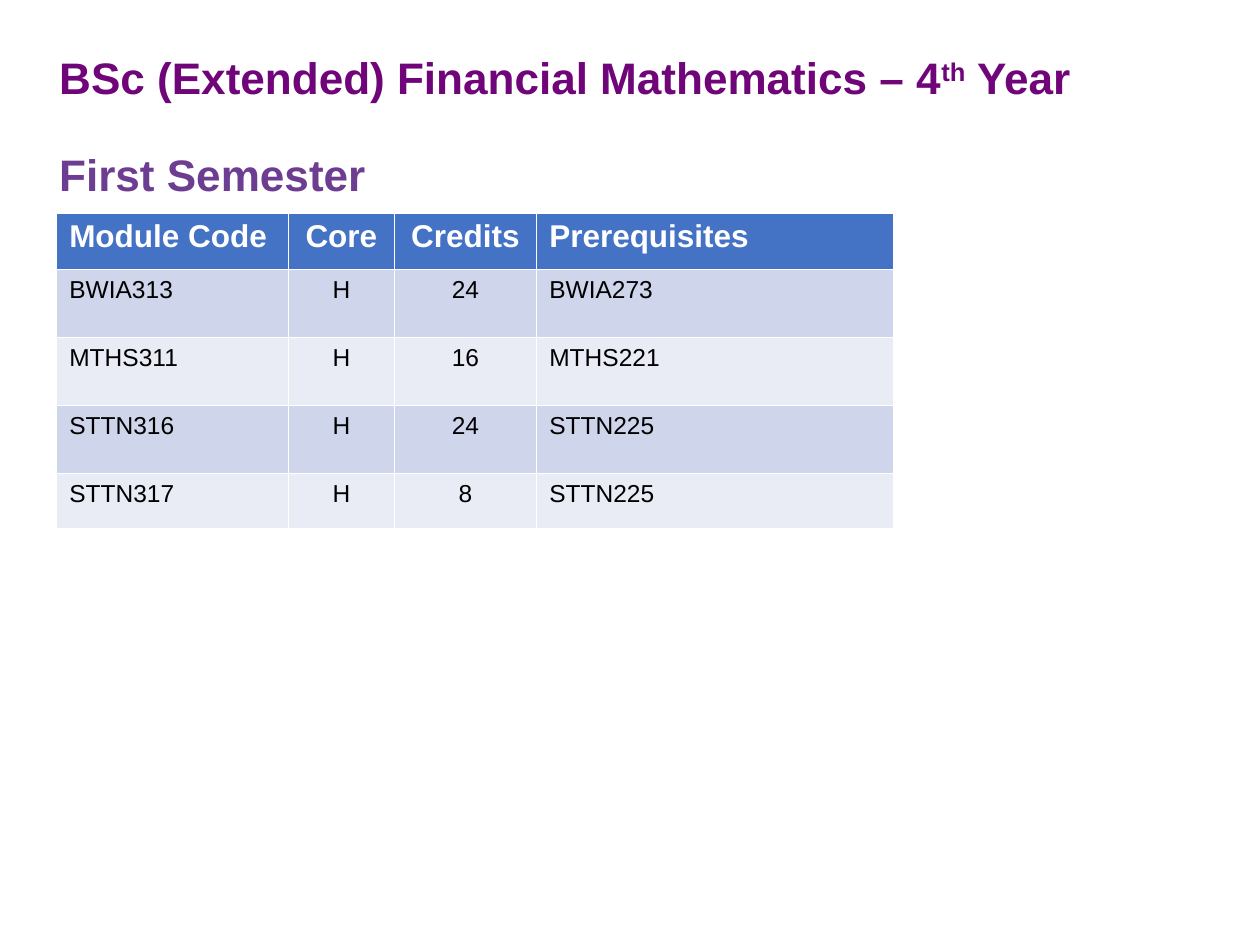
from pptx import Presentation
from pptx.dml.color import RGBColor
from pptx.enum.text import MSO_ANCHOR, MSO_AUTO_SIZE, PP_ALIGN
from pptx.util import Inches, Pt

COLORS = {
    "title": "6F0579",
    "semester": "6C3D91",
    "header": "4472C4",
    "odd_row": "CFD5EA",
    "even_row": "E9EBF5",
    "white": "FFFFFF",
    "black": "000000",
}
MODULES = [
    ("Module Code", "Core", "Credits", "Prerequisites"),
    ("BWIA313", "H", "24", "BWIA273"),
    ("MTHS311", "H", "16", "MTHS221"),
    ("STTN316", "H", "24", "STTN225"),
    ("STTN317", "H", "8", "STTN225"),
]
COLUMN_WIDTHS = (1.84, 0.84, 1.13, 2.83)
ROW_HEIGHTS = (0.45, 0.54, 0.54, 0.54, 0.44)
CENTERED_COLUMNS = (1, 2)


def style_font(font, size, color, bold):
    """Apply the slide's typeface with a size, colour and weight."""
    font.name = "Arial"
    font.size = Pt(size)
    font.bold = bold
    font.color.rgb = RGBColor.from_string(COLORS[color])


def place_title(slide, left, top, width, height):
    """Fill the title placeholder with the programme and the semester."""
    title = slide.shapes.title
    title.left, title.top = Inches(left), Inches(top)
    title.width, title.height = Inches(width), Inches(height)
    frame = title.text_frame
    frame.word_wrap = True
    frame.auto_size = MSO_AUTO_SIZE.NONE
    frame.vertical_anchor = MSO_ANCHOR.TOP

    programme = frame.paragraphs[0]
    for text in ("BSc (Extended) Financial Mathematics – 4", "th", " Year"):
        programme.add_run().text = text
    ordinal = programme.runs[1]
    ordinal.font._element.set("baseline", "30000")

    semester = frame.add_paragraph()
    semester.text = "First Semester"
    semester.space_before = Pt(28)

    for paragraph, color in ((programme, "title"), (semester, "semester")):
        paragraph.alignment = PP_ALIGN.LEFT
        paragraph.line_spacing = 0.9
        for run in paragraph.runs:
            style_font(run.font, 25.2, color, True)


def place_modules(slide, left, top, width, height):
    """Add the table of modules with a header and alternating rows."""
    table = slide.shapes.add_table(
        len(MODULES), len(COLUMN_WIDTHS),
        Inches(left), Inches(top), Inches(width), Inches(height),
    ).table
    for column, column_width in zip(table.columns, COLUMN_WIDTHS):
        column.width = Inches(column_width)
    for row, row_height in zip(table.rows, ROW_HEIGHTS):
        row.height = Inches(row_height)

    for row_index, module in enumerate(MODULES):
        is_header = row_index == 0
        band = "odd_row" if row_index % 2 else "even_row"
        fill = "header" if is_header else band
        size, color = (18, "white") if is_header else (14, "black")
        for column_index, text in enumerate(module):
            cell = table.cell(row_index, column_index)
            cell.fill.solid()
            cell.fill.fore_color.rgb = RGBColor.from_string(COLORS[fill])
            paragraph = cell.text_frame.paragraphs[0]
            paragraph.text = text
            if column_index in CENTERED_COLUMNS:
                paragraph.alignment = PP_ALIGN.CENTER
            style_font(paragraph.runs[0].font, size, color, is_header)


def main():
    """Build and save the slide."""
    presentation = Presentation()
    presentation.slide_width = Inches(10)
    presentation.slide_height = Inches(7.5)
    slide = presentation.slides.add_slide(presentation.slide_layouts[5])
    place_title(slide, 0.37, 0.4, 9.25, 0.55)
    place_modules(slide, 0.45, 1.69, sum(COLUMN_WIDTHS), sum(ROW_HEIGHTS))
    presentation.save("out.pptx")


if __name__ == "__main__":
    main()
